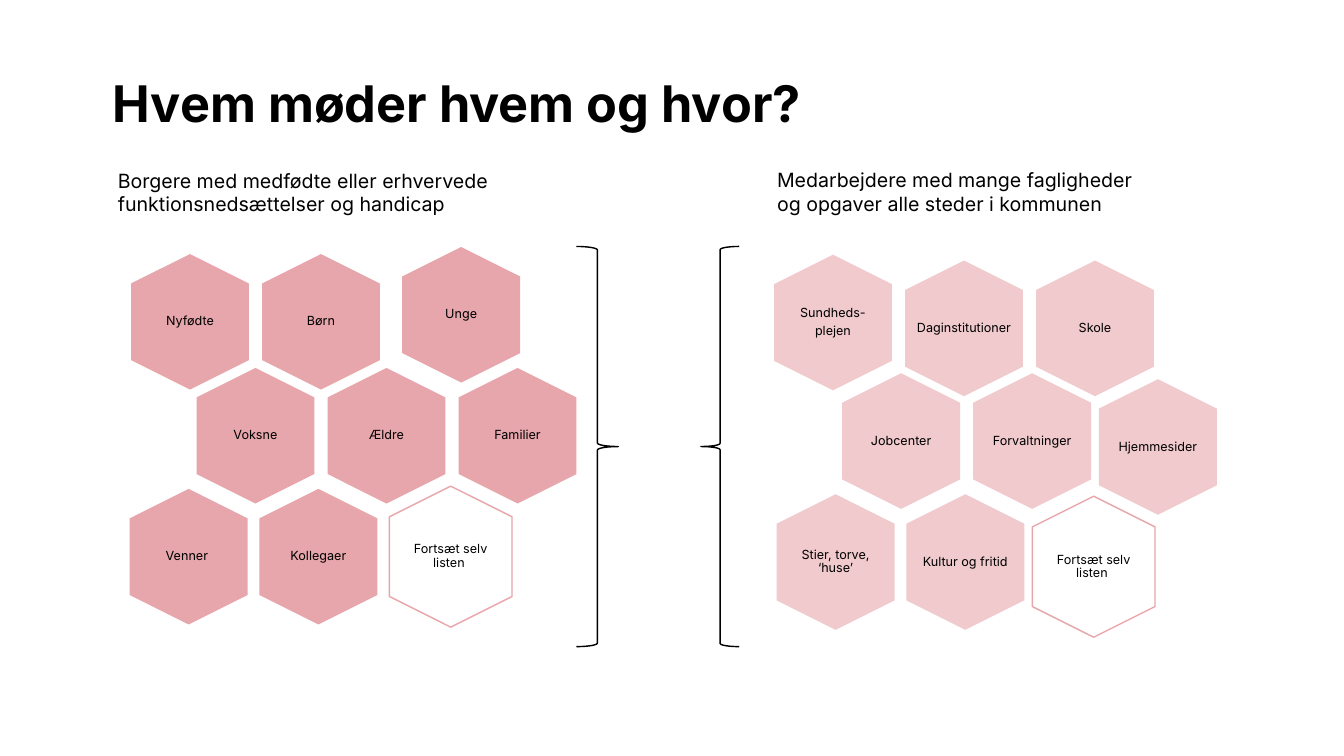
"""Build the slide on which citizens meet municipal staff."""
from dataclasses import dataclass

from pptx import Presentation
from pptx.dml.color import RGBColor
from pptx.enum.shapes import MSO_SHAPE
from pptx.enum.text import MSO_ANCHOR, MSO_AUTO_SIZE, PP_ALIGN
from pptx.util import Inches, Pt

TOP, MID = MSO_ANCHOR.TOP, MSO_ANCHOR.MIDDLE
LEFT, CENTER = PP_ALIGN.LEFT, PP_ALIGN.CENTER
FIXED = MSO_AUTO_SIZE.NONE
LBRACE, RBRACE = MSO_SHAPE.LEFT_BRACE, MSO_SHAPE.RIGHT_BRACE


@dataclass(frozen=True)
class Theme:
    font: str = "Inter"
    black: str = "000000"
    white: str = "FFFFFF"
    rose: str = "E7A6AB"
    pale: str = "F1CACD"
    title: int = 72
    head: int = 28
    cell: int = 18
    line: int = 2


THEME = Theme()
WIDE, HIGH = 26.67, 15
COL, ROW = 2.6, 2.33
HEX_W, HEX_H = 2.34, 2.69
RIM = 0.25
OPEN = 1.04

TITLE = "Hvem møder hvem og hvor?"
TITLE_BOX = (2.24, 1.57, 22.22, 1.07)
MORE = "Fortsæt selv listen "
HEADS = [
    ("Borgere med medfødte eller erhvervede funktionsnedsættelser og handicap",
     (2.24, 3.3, 9.2, 1.04), TOP, (0.1, 0.05)),
    ("Medarbejdere med mange fagligheder og opgaver alle steder i kommunen",
     (15.36, 3.27, 7.31, 1.07), MID, (0.06, 0.06)),
]
COMBS = [
    ((2.6, 5.04), THEME.rose, [
        ("Nyfødte", 0, 0), ("Børn", 1, 0), ("Unge", 2.07, -0.06),
        ("Voksne", 0.5, 0.97), ("Ældre", 1.5, 0.97), ("Familier", 2.5, 0.97),
        ("Venner ", -0.01, 2), ("Kollegaer", 0.98, 2), (MORE, 1.99, 2),
    ]),
    ((15.36, 5.17), THEME.pale, [
        ("Sundheds-\nplejen", 0, -0.05), ("Daginstitutioner", 1, 0), ("Skole", 2, 0),
        ("Jobcenter", 0.52, 0.96), ("Forvaltninger", 1.52, 0.96),
        ("Hjemmesider", 2.48, 1.01),
        ("Stier, torve, ‘huse’", 0.02, 1.99), ("Kultur og fritid", 1.01, 1.99),
        (MORE, 1.99, 2.03),
    ]),
]
BRACES = [(RBRACE, (11.44, 4.89, 0.83, 7.94)), (LBRACE, (13.91, 4.89, 0.76, 7.94))]


def rgb(code):
    return RGBColor.from_string(code)


def write(shape, text, size, pads, anchor, align, bold=False, lead=None, after=0):
    frame = shape.text_frame
    frame.text = text
    frame.word_wrap = True
    frame.auto_size = FIXED
    frame.vertical_anchor = anchor
    frame.margin_left = frame.margin_right = Inches(pads[0])
    frame.margin_top = frame.margin_bottom = Inches(pads[1])
    for para in frame.paragraphs:
        para.alignment = align
        para.line_spacing = lead
        para.space_before = Pt(0)
        para.space_after = Pt(after)
        for run in para.runs:
            font = run.font
            font.name, font.size, font.bold = THEME.font, Pt(size), bold
            font.color.rgb = rgb(THEME.black)


def draw_hex(slide, text, mid_x, mid_y, fill):
    more = text == MORE
    scale = OPEN if more else 1
    w, h = HEX_W * scale, HEX_H * scale
    x, y = mid_x - w / 2, mid_y - h / 2
    rim = w * RIM
    dots = [(x + w / 2, y), (x + w, y + rim), (x + w, y + h - rim),
            (x + w / 2, y + h), (x, y + h - rim), (x, y + rim)]
    dots = [(Inches(a), Inches(b)) for a, b in dots]
    pen = slide.shapes.build_freeform(*dots[0])
    pen.add_line_segments(dots[1:], close=True)
    cell = pen.convert_to_shape()
    cell.shadow.inherit = False
    cell.fill.solid()
    cell.fill.fore_color.rgb = rgb(THEME.white if more else fill)
    if more:
        cell.line.color.rgb = rgb(THEME.rose)
        cell.line.width = Pt(THEME.line)
    else:
        cell.line.fill.background()
    write(cell, text, THEME.cell, (0.22, 0.25), MID, CENTER,
          lead=0.9, after=THEME.cell * 0.35)


def main():
    deck = Presentation()
    deck.slide_width, deck.slide_height = Inches(WIDE), Inches(HIGH)
    slide = deck.slides.add_slide(deck.slide_layouts[5])
    title = slide.shapes.title
    title.left, title.top, title.width, title.height = map(Inches, TITLE_BOX)
    write(title, TITLE, THEME.title, (0, 0), TOP, LEFT, bold=True, lead=0.9)

    for (left, top), fill, cells in COMBS:
        for text, col, row in cells:
            draw_hex(slide, text, left + col * COL + HEX_W / 2,
                     top + row * ROW + HEX_H / 2, fill)

    for text, box, anchor, pads in HEADS:
        head = slide.shapes.add_textbox(*map(Inches, box))
        write(head, text, THEME.head, pads, anchor, LEFT)

    for kind, box in BRACES:
        brace = slide.shapes.add_shape(kind, *map(Inches, box))
        brace.shadow.inherit = False
        brace.fill.background()
        brace.line.color.rgb = rgb(THEME.black)
        brace.line.width = Pt(THEME.line)

    deck.save("out.pptx")


if __name__ == "__main__":
    main()
